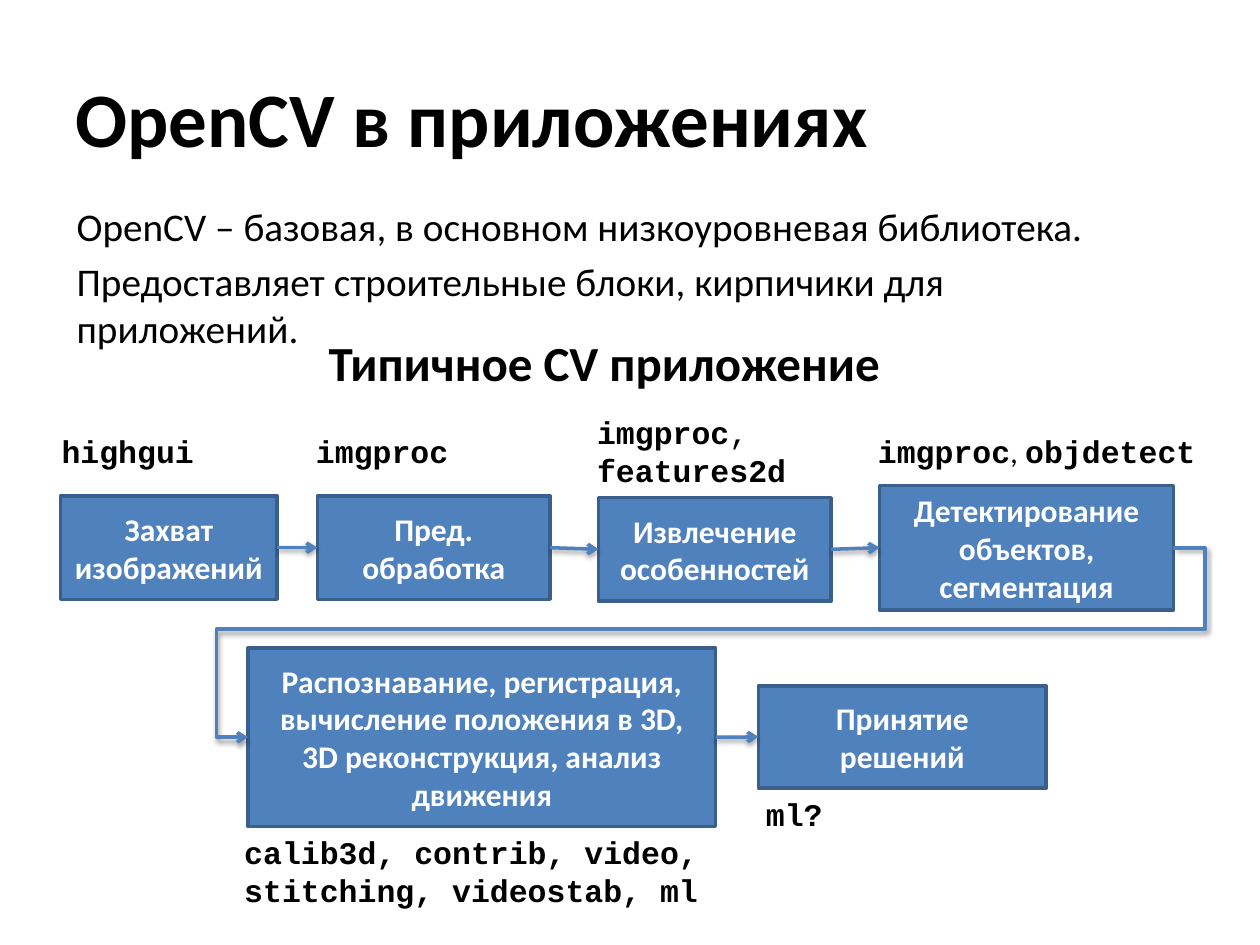
from lxml import etree
from pptx import Presentation
from pptx.dml.color import RGBColor
from pptx.enum import shapes, text
from pptx.oxml import ns
from pptx.util import Pt

BLUE, DARK_BLUE, BLACK, WHITE = "4F81BD", "3A5F8C", "000000", "FFFFFF"
SANS, MONO = "Calibri", "Courier New"
TOP, LEFT, BOTTOM, RIGHT = range(4)

STAGES = [
    ("Захват изображений", (34.6, 283.5, 123.8, 59)),
    ("Пред. обработка", (181.4, 283.5, 133, 59)),
    ("Извлечение особенностей", (342, 284.4, 133, 59)),
    ("Детектирование объектов, сегментация", (502.6, 277.5, 168, 71)),
    ("Распознавание, регистрация, вычисление положения в 3D, "
     "3D реконструкция, анализ движения", (141.8, 370.3, 267.2, 102)),
    ("Принятие решений", (433.4, 391.9, 164.5, 58.4)),
]

# Runs are (text, font, bold)
MODULES = [
    ([("highgui", MONO, True)], (28.1, 243.4, 90.7, 29)),
    ([("imgproc", MONO, True)], (173.5, 243.4, 90.7, 29)),
    ([("imgproc", MONO, True), (", \n", MONO, False),
      ("features2d", MONO, True)], (334.1, 232.6, 123.8, 51)),
    ([("imgproc", MONO, True), (", ", SANS, False),
      ("objdetect", MONO, True)], (494.6, 243.4, 198, 29)),
    ([("calib3d, contrib, video,\nstitching, videostab, ml", MONO, True)],
     (132.5, 472.3, 276.5, 51)),
    ([("ml?", MONO, True)], (430.6, 450.7, 47.5, 29)),
]


def rgb(value):
    return RGBColor.from_string(value)


def add_xml(parent, tag, **attrs):
    child = etree.SubElement(parent, ns.qn(tag))
    for name, value in attrs.items():
        child.set(name, str(value))
    return child


def add_runs(p, runs, size, color):
    """Add (text, font, bold) runs; a newline becomes a line break."""
    for content, font, bold in runs:
        for i, line in enumerate(content.split("\n")):
            if i:
                p.add_line_break()
            if line:
                r = p.add_run()
                r.text = line
                r.font.name, r.font.size, r.font.bold = font, Pt(size), bold
                r.font.color.rgb = rgb(color)


def add_text(slide, paragraphs, box, size, wrap=False, space_before=0,
             anchor=text.MSO_ANCHOR.TOP):
    tf = slide.shapes.add_textbox(*map(Pt, box)).text_frame
    tf.word_wrap, tf.vertical_anchor = wrap, anchor
    for i, runs in enumerate(paragraphs):
        p = tf.add_paragraph() if i else tf.paragraphs[0]
        p.space_before = Pt(space_before)
        add_runs(p, runs, size, BLACK)


def add_stage(slide, label, box):
    sp = slide.shapes.add_shape(shapes.MSO_SHAPE.RECTANGLE, *map(Pt, box))
    sp.shadow.inherit = False
    sp.fill.solid()
    sp.fill.fore_color.rgb = rgb(BLUE)
    sp.line.color.rgb, sp.line.width = rgb(DARK_BLUE), Pt(2)
    tf = sp.text_frame
    tf.word_wrap, tf.vertical_anchor = True, text.MSO_ANCHOR.MIDDLE
    p = tf.paragraphs[0]
    p.alignment = text.PP_ALIGN.CENTER
    add_runs(p, [(label, SANS, True)], 18, WHITE)
    return sp


def add_shadow(sp_pr):
    effects = add_xml(sp_pr, "a:effectLst")
    shadow = add_xml(effects, "a:outerShdw", blurRad=Pt(3.1), dist=Pt(1.6),
                     dir=90 * 60000, rotWithShape=0)
    add_xml(add_xml(shadow, "a:srgbClr", val=BLACK), "a:alpha", val=38000)


def add_arrow(slide, start, end, kind=shapes.MSO_CONNECTOR.STRAIGHT):
    """Join the right side of one stage to the left side of the next."""
    cxn = slide.shapes.add_connector(kind, 0, 0, 0, 0)
    cxn.begin_connect(start, RIGHT)
    cxn.end_connect(end, LEFT)
    cxn.line.color.rgb, cxn.line.width = rgb(BLUE), Pt(2)
    add_xml(cxn.line._get_or_add_ln(), "a:tailEnd", type="arrow")
    add_shadow(cxn._element.spPr)
    return cxn


def add_return_arrow(slide, start, end):
    """Lead the flow around both stages and back to the next row."""
    cxn = add_arrow(slide, start, end, shapes.MSO_CONNECTOR.ELBOW)
    geom = cxn._element.spPr.find(ns.qn("a:prstGeom"))
    geom.set("prst", "bentConnector5")
    for guide in list(geom):
        geom.remove(guide)
    guides = add_xml(geom, "a:avLst")
    for i, value in enumerate((-3400, 42900, 103400), start=1):
        add_xml(guides, "a:gd", name=f"adj{i}", fmla=f"val {value}")


def main():
    prs = Presentation()
    prs.slide_width, prs.slide_height = Pt(720), Pt(540)
    slide = prs.slides.add_slide(prs.slide_layouts[6])

    add_text(slide, [[("OpenCV в приложениях", SANS, True)]],
             (36, 21.6, 611.3, 90), 44, wrap=True,
             anchor=text.MSO_ANCHOR.MIDDLE)
    add_text(slide, [
        [("OpenCV – базовая, в основном низкоуровневая библиотека.",
          SANS, False)],
        [("Предоставляет строительные блоки, кирпичики для приложений.",
          SANS, False)],
    ], (36.7, 112.3, 640.8, 98.6), 22.4, wrap=True, space_before=4.5)
    add_text(slide, [[("Типичное CV приложение", SANS, True)]],
             (180.7, 186.5, 334.8, 41), 28)

    stages = [add_stage(slide, label, box) for label, box in STAGES]
    for i, (start, end) in enumerate(zip(stages, stages[1:])):
        join = add_return_arrow if i == 3 else add_arrow
        join(slide, start, end)
    for runs, box in MODULES:
        add_text(slide, [runs], box, 18)

    prs.save("out.pptx")


if __name__ == "__main__":
    main()
